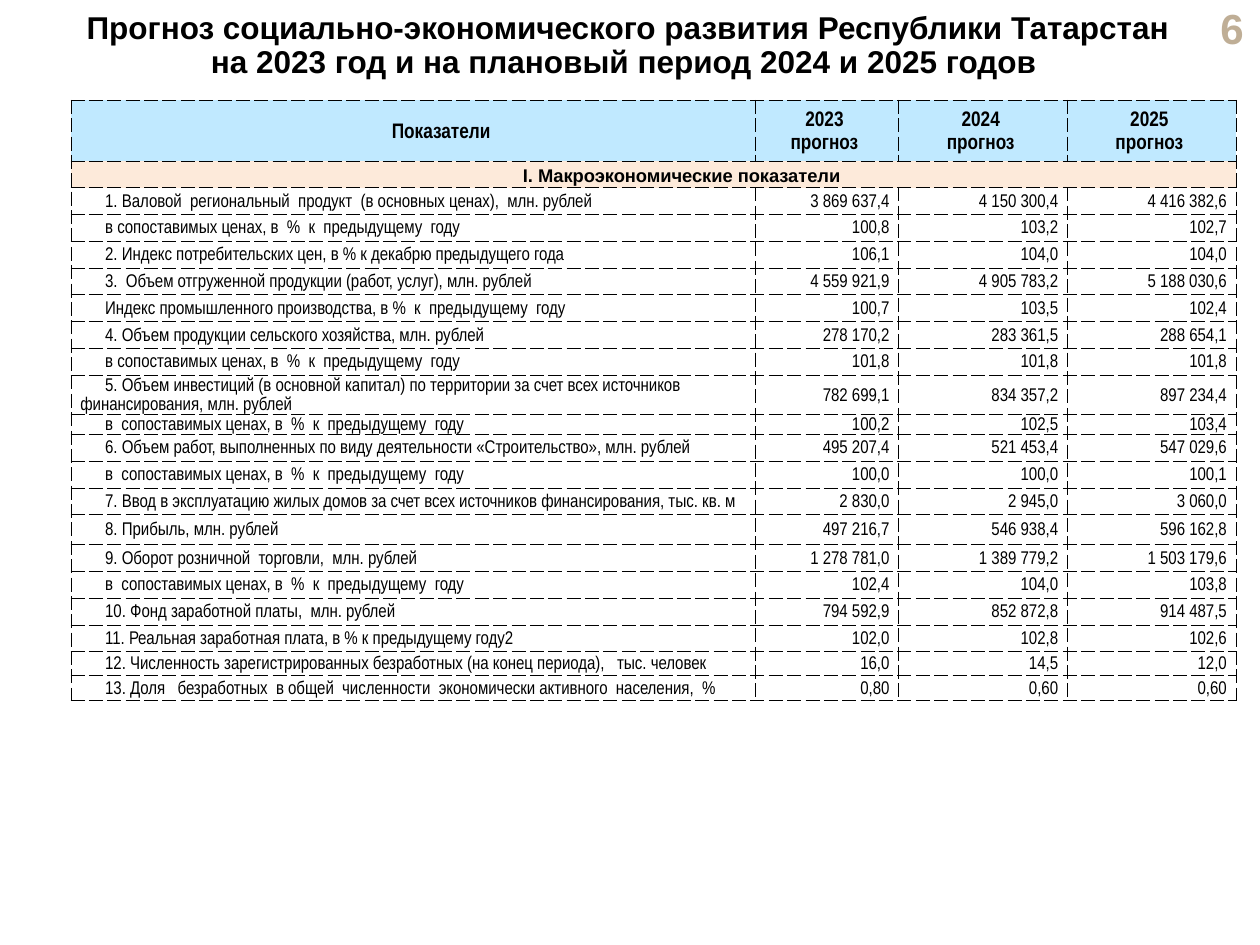
from lxml.etree import SubElement
from pptx import Presentation
from pptx.dml.color import RGBColor
from pptx.enum.text import MSO_ANCHOR, PP_ALIGN
from pptx.oxml.ns import qn
from pptx.util import Cm, Pt

TITLE = ("Прогноз социально-экономического развития Республики Татарстан "
         "на 2023 год и на плановый период 2024 и 2025 годов ")
PAGE = "6"
HEADER = ("Показатели", "2023\nпрогноз", "2024\nпрогноз", "2025\nпрогноз")
SECTION = "I. Макроэкономические показатели"
COMPARABLE = "в сопоставимых ценах, в  %  к  предыдущему  году"
COMPARABLE_WIDE = "в  сопоставимых ценах, в  %  к  предыдущему  году"
INDICATORS = [
    ("1. Валовой  региональный  продукт  (в основных ценах),  млн. рублей",
     "3 869 637,4", "4 150 300,4", "4 416 382,6"),
    (COMPARABLE, "100,8", "103,2", "102,7"),
    ("2. Индекс потребительских цен, в % к декабрю предыдущего года",
     "106,1", "104,0", "104,0"),
    ("3.  Объем отгруженной продукции (работ, услуг), млн. рублей",
     "4 559 921,9", "4 905 783,2", "5 188 030,6"),
    ("Индекс промышленного производства, в %  к  предыдущему  году",
     "100,7", "103,5", "102,4"),
    ("4. Объем продукции сельского хозяйства, млн. рублей",
     "278 170,2", "283 361,5", "288 654,1"),
    (COMPARABLE, "101,8", "101,8", "101,8"),
    ("5. Объем инвестиций (в основной капитал) по территории за счет всех "
     "источников финансирования, млн. рублей",
     "782 699,1", "834 357,2", "897 234,4"),
    (COMPARABLE_WIDE, "100,2", "102,5", "103,4"),
    ("6. Объем работ, выполненных по виду деятельности «Строительство», млн. рублей",
     "495 207,4", "521 453,4", "547 029,6"),
    (COMPARABLE_WIDE, "100,0", "100,0", "100,1"),
    ("7. Ввод в эксплуатацию жилых домов за счет всех источников "
     "финансирования, тыс. кв. м", "2 830,0", "2 945,0", "3 060,0"),
    ("8. Прибыль, млн. рублей", "497 216,7", "546 938,4", "596 162,8"),
    ("9. Оборот розничной  торговли,  млн. рублей",
     "1 278 781,0", "1 389 779,2", "1 503 179,6"),
    (COMPARABLE_WIDE, "102,4", "104,0", "103,8"),
    ("10. Фонд заработной платы,  млн. рублей",
     "794 592,9", "852 872,8", "914 487,5"),
    ("11. Реальная заработная плата, в % к предыдущему году2",
     "102,0", "102,8", "102,6"),
    ("12. Численность зарегистрированных безработных (на конец периода),   "
     "тыс. человек", "16,0", "14,5", "12,0"),
    ("13. Доля   безработных  в общей  численности  экономически активного  "
     "населения,  %", "0,80", "0,60", "0,60"),
]
COLUMN_WIDTHS = (13.79, 2.9, 3.4, 3.4)
ROW_HEIGHT = 0.54
SPECIAL_HEIGHTS = {0: 1.23, 1: 0.53, 9: 0.8, 10: 0.39, 14: 0.6, 19: 0.48, 20: 0.5}


def rgb(color):
    return RGBColor.from_string(color)


def style(p, size, font, color="000000", bold=False, align=PP_ALIGN.LEFT, spacing=None):
    p.alignment = align
    p.line_spacing = spacing
    f = p.font
    f.size, f.name, f.bold = Pt(size), font, bold
    f.color.rgb = rgb(color)


def add_text(s, box, text, anchor, **look):
    tb = s.shapes.add_textbox(*map(Cm, box))
    tf = tb.text_frame
    tf.word_wrap = True
    tf.vertical_anchor = anchor
    tf.paragraphs[0].text = text
    style(tf.paragraphs[0], **look)


def add_borders(cell):
    tc_pr = cell._tc.get_or_add_tcPr()
    for side in ("lnL", "lnR", "lnT", "lnB"):
        ln = SubElement(tc_pr, qn(f"a:{side}"), w=str(Pt(0.5)))
        fill = SubElement(ln, qn("a:solidFill"))
        SubElement(fill, qn("a:srgbClr"), val="000000")
        SubElement(ln, qn("a:prstDash"), val="sysDash")


def fill_cell(cell, text, fill, left, right, indent, **look):
    add_borders(cell)
    cell.fill.solid()
    cell.fill.fore_color.rgb = rgb(fill)
    cell.vertical_anchor = MSO_ANCHOR.MIDDLE
    cell.margin_left, cell.margin_right = Cm(left), Cm(right)
    cell.margin_top = cell.margin_bottom = 0
    p = cell.text_frame.paragraphs[0]
    p.text = text
    p_pr = p._p.get_or_add_pPr()
    p_pr.set("marL", "0")
    p_pr.set("indent", str(Cm(indent)))
    style(p, **look)


def add_indicator_table(s):
    rows = [HEADER, (SECTION, "", "", ""), *INDICATORS]
    heights = [SPECIAL_HEIGHTS.get(i, ROW_HEIGHT) for i in range(len(rows))]
    table = s.shapes.add_table(len(rows), len(HEADER), Cm(1.43), Cm(2.02),
                               Cm(sum(COLUMN_WIDTHS)), Cm(sum(heights))).table
    table.first_row = table.horz_banding = False
    for column, width in zip(table.columns, COLUMN_WIDTHS):
        column.width = Cm(width)
    for i, (values, height) in enumerate(zip(rows, heights)):
        table.rows[i].height = Cm(height)
        for j, value in enumerate(values):
            if i < 2:
                look = dict(fill=("C0E9FF", "FDEADA")[i], left=0, right=0.1,
                            indent=0 if j else 1.24, size=(12, 10.5)[i],
                            font=("Arial Narrow", "Arial")[i], bold=True,
                            align=PP_ALIGN.CENTER, spacing=1.2)
            else:
                look = dict(fill="FFFFFF", left=0.19, right=0.19, indent=0.5,
                            size=10.5, font="Arial Narrow", spacing=Pt(11.2),
                            align=PP_ALIGN.RIGHT if j else PP_ALIGN.LEFT)
            fill_cell(table.cell(i, j), value, **look)
    table.cell(1, 0).merge(table.cell(1, len(HEADER) - 1))


def main():
    prs = Presentation()
    prs.slide_width, prs.slide_height = Cm(25.4), Cm(19.05)
    s = prs.slides.add_slide(prs.slide_layouts[6])
    add_text(s, (23.14, 0.13, 2.18, 0.86), PAGE, MSO_ANCHOR.MIDDLE, size=24,
             font="Arial", color="BFAE96", bold=True, align=PP_ALIGN.RIGHT)
    add_text(s, (1.42, 0.13, 22.48, 1.6), TITLE, MSO_ANCHOR.TOP, size=18,
             font="Arial", bold=True, align=PP_ALIGN.CENTER, spacing=0.9)
    add_indicator_table(s)
    prs.save("out.pptx")


if __name__ == "__main__":
    main()
